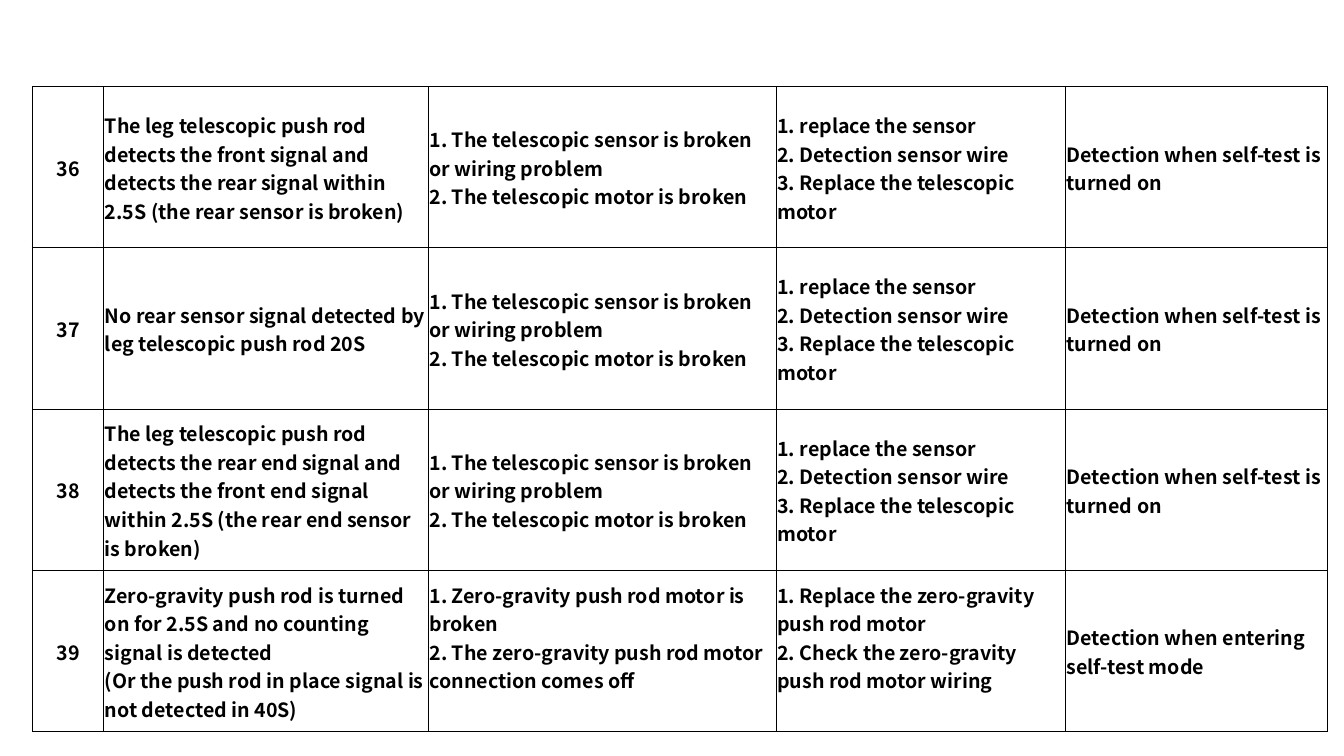
import pptx
import pptx.util
import pptx.dml.color
import pptx.enum.text
import pptx.oxml
import pptx.oxml.ns

Inch, Pt = pptx.util.Inches, pptx.util.Pt
FONT, INK = "Noto Sans CJK SC", "000000"
LINE = 0.28  # height of one text line


def color(code):
    return pptx.dml.color.RGBColor.from_string(code)


def border(cell):
    props = cell._tc.get_or_add_tcPr()
    for n, side in enumerate(("lnL", "lnR", "lnT", "lnB")):
        props.insert(n, pptx.oxml.parse_xml(
            f'<a:{side} {pptx.oxml.ns.nsdecls("a")} w="{Pt(0.75)}">'
            f'<a:solidFill><a:srgbClr val="{INK}"/></a:solidFill></a:{side}>'))


# Wording: number, fault, cause, remedy, time of detection
cause = ("1. The telescopic sensor is broken or wiring problem\v"
         "2. The telescopic motor is broken")
remedy = ("1. replace the sensor\v2. Detection sensor wire\v"
          "3. Replace the telescopic motor")
when = "Detection when self-test is turned on"
faults = [
    ("36", "The leg telescopic push rod detects the front signal and detects "
     "the rear signal within 2.5S (the rear sensor is broken)",
     cause, remedy, when),
    ("37", "No rear sensor signal detected by leg telescopic push rod 20S",
     cause, remedy, when),
    ("38", "The leg telescopic push rod detects the rear end signal and detects "
     "the front end signal within 2.5S (the rear end sensor is broken)",
     cause, remedy, when),
    ("39", "Zero-gravity push rod is turned on for 2.5S and no counting signal "
     "is detected\v(Or the push rod in place signal is not detected in 40S)",
     "1. Zero-gravity push rod motor is broken\v"
     "2. The zero-gravity push rod motor connection comes off",
     "1. Replace the zero-gravity push rod motor\v"
     "2. Check the zero-gravity push rod motor wiring",
     "Detection when entering self-test mode"),
]

# Slide
deck = pptx.Presentation()
deck.slide_width, deck.slide_height = Inch(13.33), Inch(7.5)
slide = deck.slides.add_slide(deck.slide_layouts[6])

# Table grid
widths = [0.71, 3.22, 3.45, 2.87, 2.6]
high = 1.6
table = slide.shapes.add_table(
    len(faults), len(widths), Inch(0.32), Inch(0.86),
    Inch(sum(widths)), Inch(high * len(faults))).table
table.first_row = table.horz_banding = False
for col, wide in zip(table.columns, widths):
    col.width = Inch(wide)

# Cells
for r, fault in enumerate(faults):
    table.rows[r].height = Inch(high)
    for c, text in enumerate(fault):
        cell = table.cell(r, c)
        cell.text = text
        cell.fill.background()
        cell.vertical_anchor = pptx.enum.text.MSO_ANCHOR.MIDDLE
        cell.margin_left = cell.margin_right = cell.margin_top = Inch(0.01)
        # The last cause and remedy sit half a line higher
        raised = r == len(faults) - 1 and c in (2, 3)
        cell.margin_bottom = Inch(LINE if raised else 0)
        border(cell)
        para = cell.text_frame.paragraphs[0]
        align = pptx.enum.text.PP_ALIGN
        para.alignment = align.LEFT if c else align.CENTER
        para.font.name, para.font.size = FONT, Pt(14)
        para.font.bold = True
        para.font.color.rgb = color(INK)

deck.save("out.pptx")
